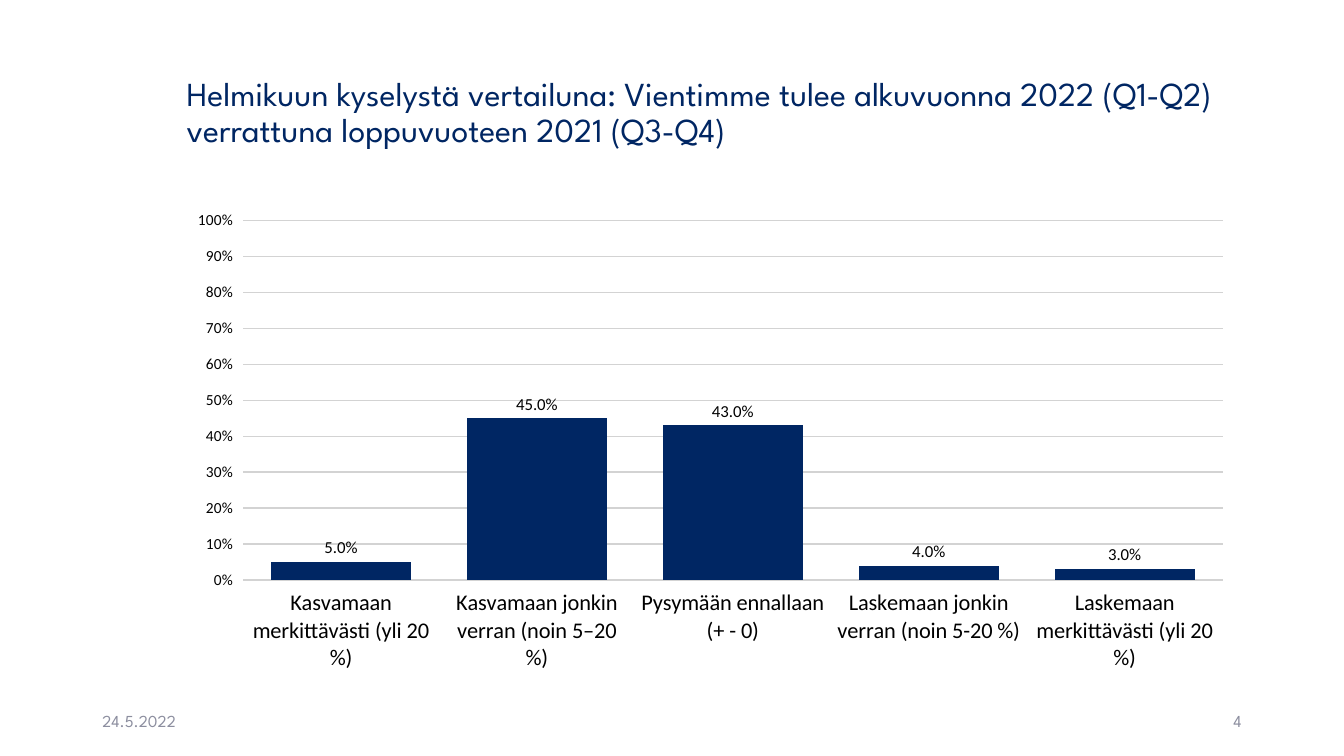
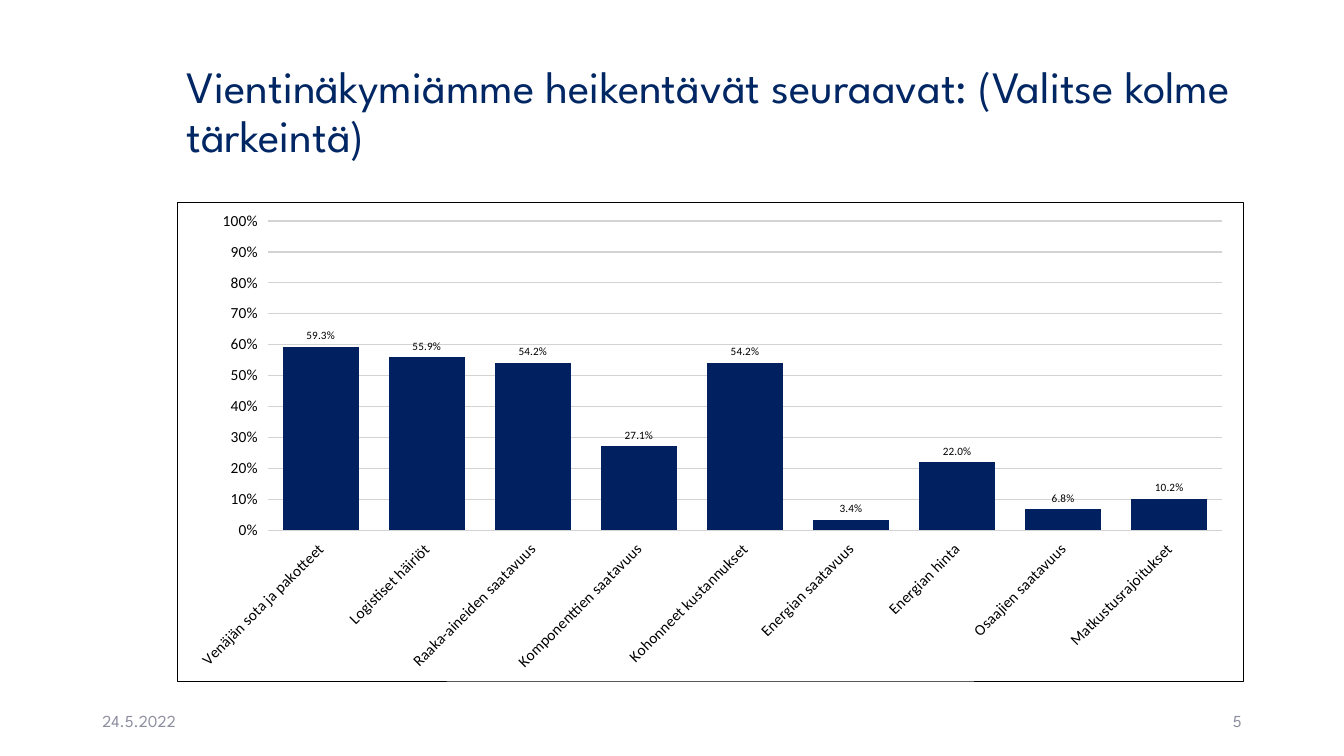
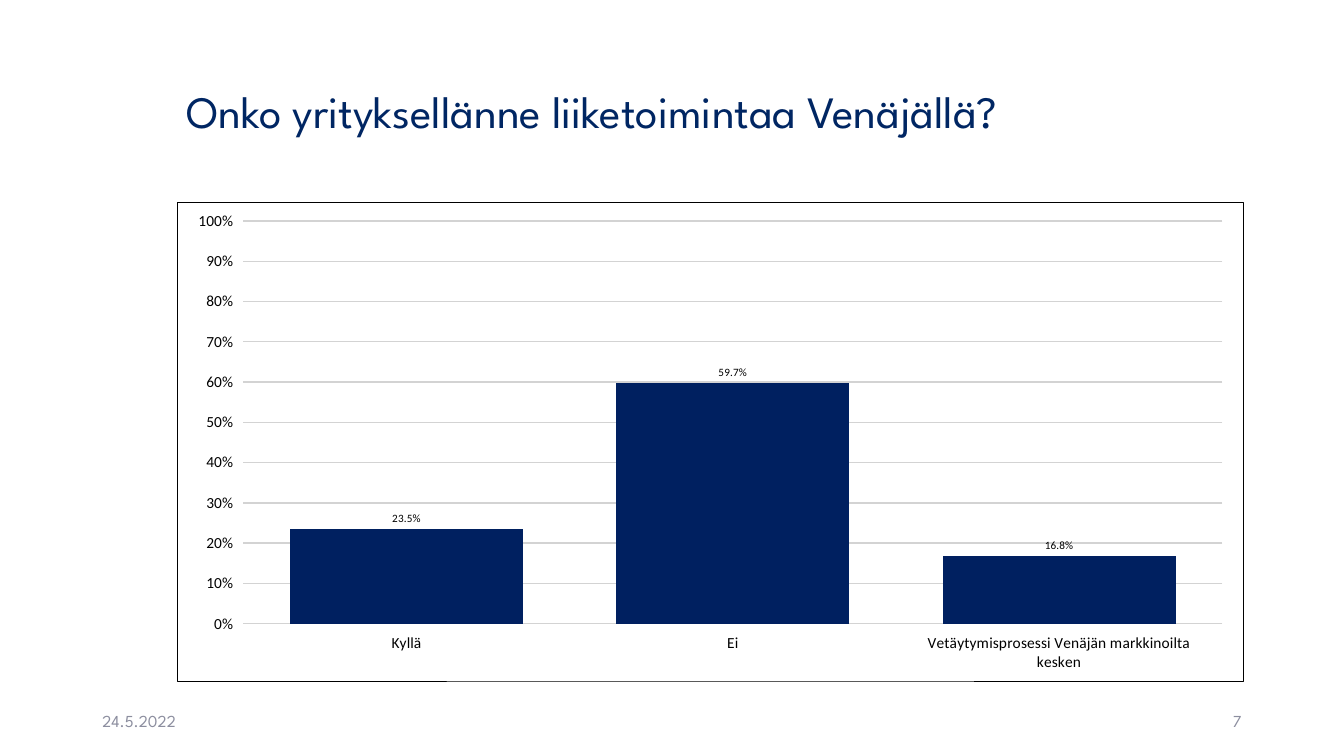
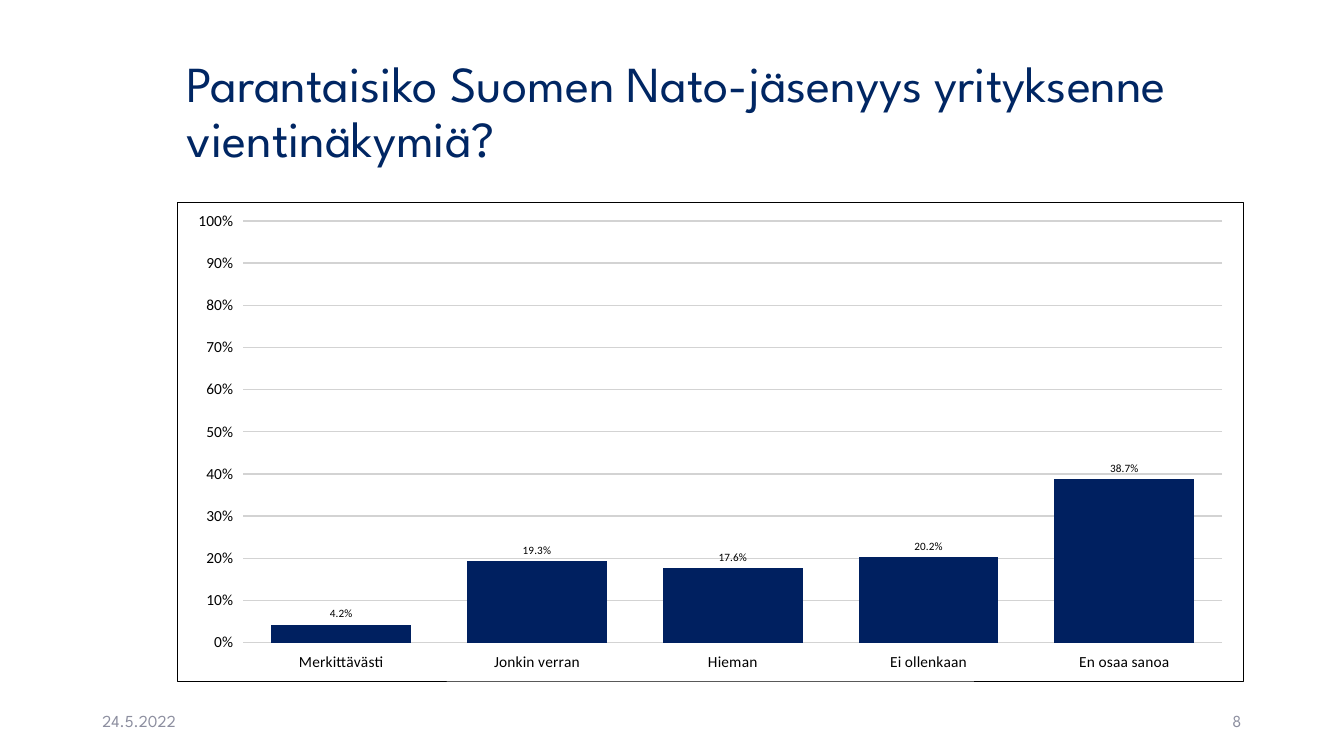
import pptx
import pptx.chart.data
import pptx.dml.color
import pptx.enum.chart
import pptx.enum.text
import pptx.oxml
import pptx.oxml.ns
import pptx.util
from pptx.util import Cm

COLORS = {"title": "002663", "footer": "8C8E9F", "text": "000000", "grid": "D3D3D3",
          "february": "002663", "may": "002060", "plot": "FFFFFF", "border": "000000"}
HEADING_FONT, CHART_FONT = "League Spartan", "Calibri"
DATE = "24.5.2022"
ALIGN = pptx.enum.text.PP_ALIGN
CONTENT_LEFT, CONTENT_WIDTH = Cm(4.45), Cm(26.9)
BORDER = f'<a:solidFill><a:srgbClr val="{COLORS["border"]}"/></a:solidFill>'

SURVEY = [
    {"title": "Helmikuun kyselystä vertailuna: Vientimme tulee alkuvuonna 2022 (Q1-Q2) "
              "verrattuna loppuvuoteen 2021 (Q3-Q4)",
     "number": 4, "title_size": 24, "category_size": 16, "label_size": 12,
     "bar": "february", "bordered": False, "rotation": None,
     "answers": {"Kasvamaan merkittävästi (yli 20 %)": 0.05,
                 "Kasvamaan jonkin verran (noin 5–20 %)": 0.45,
                 "Pysymään ennallaan (+ - 0)": 0.43,
                 "Laskemaan jonkin verran (noin 5-20 %)": 0.04,
                 "Laskemaan merkittävästi (yli 20 %)": 0.03}},
    {"title": "Vientinäkymiämme heikentävät seuraavat: (Valitse kolme tärkeintä)",
     "number": 5, "title_size": 32, "category_size": 11, "label_size": 8,
     "bar": "may", "bordered": True, "rotation": -45,
     "answers": {"Venäjän sota ja pakotteet": 0.593, "Logistiset häiriöt": 0.559,
                 "Raaka-aineiden saatavuus": 0.542, "Komponenttien saatavuus": 0.271,
                 "Kohonneet kustannukset": 0.542, "Energian saatavuus": 0.034,
                 "Energian hinta": 0.22, "Osaajien saatavuus": 0.068,
                 "Matkustusrajoitukset": 0.102}},
    {"title": "Onko yrityksellänne liiketoimintaa Venäjällä?",
     "number": 7, "title_size": 32, "category_size": 11, "label_size": 8,
     "bar": "may", "bordered": True, "rotation": None,
     "answers": {"Kyllä": 0.235, "Ei": 0.597,
                 "Vetäytymisprosessi Venäjän markkinoilta kesken": 0.168}},
    {"title": "Parantaisiko Suomen Nato-jäsenyys yrityksenne vientinäkymiä?",
     "number": 8, "title_size": 36, "category_size": 11, "label_size": 8,
     "bar": "may", "bordered": True, "rotation": None,
     "answers": {"Merkittävästi": 0.042, "Jonkin verran": 0.193, "Hieman": 0.176,
                 "Ei ollenkaan": 0.202, "En osaa sanoa": 0.387}},
]


def style_font(font, name, size, color):
    for attribute, value in {"name": name, "size": pptx.util.Pt(size), "bold": False}.items():
        setattr(font, attribute, value)
    font.color.rgb = pptx.dml.color.RGBColor.from_string(COLORS[color])


def area_format(fill, line):
    return pptx.oxml.parse_xml(
        f'<c:spPr {pptx.oxml.ns.nsdecls("c", "a")}>{fill}<a:ln w="6350">{line}</a:ln></c:spPr>')


prs = pptx.Presentation()
prs.slide_width, prs.slide_height = Cm(33.87), Cm(19.05)
title_only = prs.slide_layouts[5]

for question in SURVEY:
    slide = prs.slides.add_slide(title_only)

    # Title
    heading = slide.shapes.title
    for attribute, value in {"left": CONTENT_LEFT, "top": Cm(1.02),
                             "width": CONTENT_WIDTH, "height": Cm(3.68)}.items():
        setattr(heading, attribute, value)
    frame = heading.text_frame
    frame.text = question["title"]
    for attribute, value in {"word_wrap": True,
                             "auto_size": pptx.enum.text.MSO_AUTO_SIZE.NONE,
                             "vertical_anchor": pptx.enum.text.MSO_ANCHOR.MIDDLE}.items():
        setattr(frame, attribute, value)
    paragraph = frame.paragraphs[0]
    paragraph.alignment, paragraph.line_spacing = ALIGN.LEFT, 0.9
    style_font(paragraph.runs[0].font, HEADING_FONT, question["title_size"], "title")

    # Date and slide number
    for text, left, alignment in ((DATE, 2.33, ALIGN.LEFT),
                                  (str(question["number"]), 23.92, ALIGN.RIGHT)):
        footer = slide.shapes.add_textbox(Cm(left), Cm(17.66), Cm(7.62), Cm(1.01)).text_frame
        footer.text = text
        footer.word_wrap = True
        footer.vertical_anchor = pptx.enum.text.MSO_ANCHOR.MIDDLE
        footer.paragraphs[0].alignment = alignment
        style_font(footer.paragraphs[0].runs[0].font, HEADING_FONT, 12, "footer")

    # Chart of answers
    data = pptx.chart.data.CategoryChartData(number_format="0.0%")
    data.categories = list(question["answers"])
    data.add_series("Series 1", list(question["answers"].values()))
    chart = slide.shapes.add_chart(
        pptx.enum.chart.XL_CHART_TYPE.COLUMN_CLUSTERED,
        CONTENT_LEFT, Cm(5.08), CONTENT_WIDTH, Cm(12.09), data).chart
    chart.has_legend = chart.has_title = False
    style_font(chart.font, CHART_FONT, 11, "text")

    # Chart frame and plot background
    frame_line = BORDER if question["bordered"] else "<a:noFill/>"
    plot_fill = f'<a:solidFill><a:srgbClr val="{COLORS["plot"]}"/></a:solidFill>'
    chart_root = chart._chartSpace.find(pptx.oxml.ns.qn("c:chart"))
    chart_root.addnext(area_format("<a:noFill/>", frame_line))
    chart_root.find(pptx.oxml.ns.qn("c:plotArea")).append(
        area_format(plot_fill, "<a:noFill/>"))

    # Axes
    percent_axis, answer_axis = chart.value_axis, chart.category_axis
    for axis, size in ((percent_axis, 11), (answer_axis, question["category_size"])):
        axis.format.line.fill.background()
        style_font(axis.tick_labels.font, CHART_FONT, size, "text")
    for attribute, value in {"minimum_scale": 0, "maximum_scale": 1, "major_unit": 0.1,
                             "has_major_gridlines": True}.items():
        setattr(percent_axis, attribute, value)
    percent_axis.tick_labels.number_format = "0%"
    percent_axis.tick_labels.number_format_is_linked = False
    grid = percent_axis.major_gridlines.format.line
    grid.width = pptx.util.Pt(1)
    grid.color.rgb = pptx.dml.color.RGBColor.from_string(COLORS["grid"])
    if question["rotation"] is not None:
        label_body = answer_axis._element.find(".//" + pptx.oxml.ns.qn("a:bodyPr"))
        label_body.set("rot", str(question["rotation"] * 60000))

    # Bars and their labels
    plot = chart.plots[0]
    plot.gap_width, plot.vary_by_categories = 40, False
    bars = plot.series[0]
    bars.format.fill.solid()
    bars.format.fill.fore_color.rgb = pptx.dml.color.RGBColor.from_string(
        COLORS[question["bar"]])
    labels = bars.data_labels
    for attribute, value in {"show_value": True, "number_format": "0.0%",
                             "number_format_is_linked": False,
                             "position": pptx.enum.chart.XL_LABEL_POSITION.OUTSIDE_END}.items():
        setattr(labels, attribute, value)
    style_font(labels.font, CHART_FONT, question["label_size"], "text")

prs.save("out.pptx")
